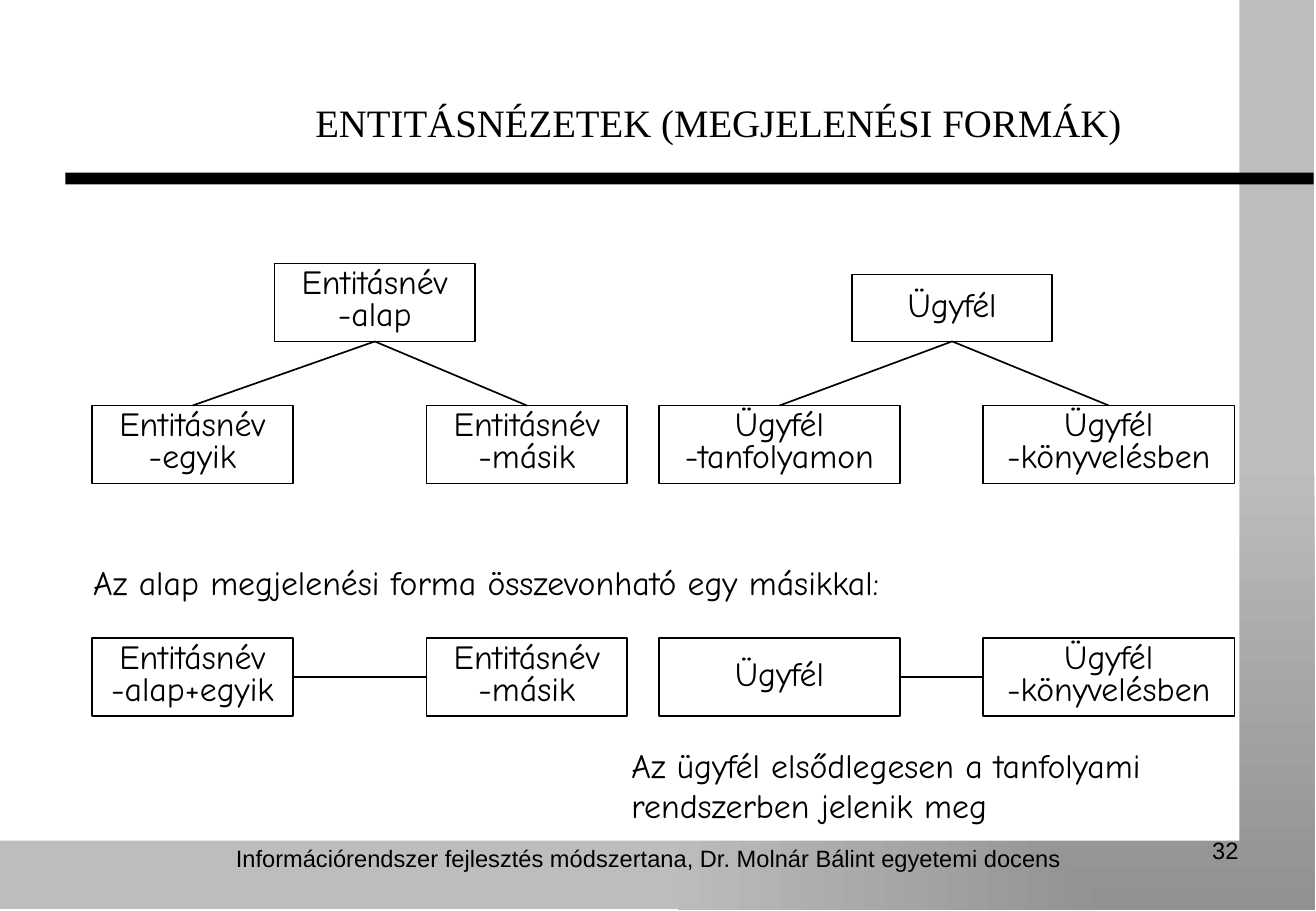
"""Build the slide on entity views and how they can be merged."""
from lxml.etree import SubElement
from pptx import Presentation
from pptx.dml.color import RGBColor
from pptx.enum.shapes import MSO_CONNECTOR, MSO_SHAPE
from pptx.enum.text import MSO_ANCHOR, PP_ALIGN
from pptx.oxml import parse_xml
from pptx.oxml.ns import nsdecls, qn
from pptx.util import Cm, Pt

COLORS = {"ink": "000000", "paper": "FFFFFF", "dark": "919191",
          "light": "BDBDBD", "shadow": "C0C0C0"}
INK = RGBColor.from_string(COLORS["ink"])

prs = Presentation()
prs.slide_width, prs.slide_height = Cm(27.51), Cm(19.05)
slide = prs.slides.add_slide(prs.slide_layouts[6])
shapes = slide.shapes


def add_rectangle(place, fill=None):
    rectangle = shapes.add_shape(MSO_SHAPE.RECTANGLE, *map(Cm, place))
    rectangle.shadow.inherit = False
    rectangle.line.fill.background()
    if fill:
        rectangle.fill.solid()
        rectangle.fill.fore_color.rgb = RGBColor.from_string(COLORS[fill])
    else:
        rectangle.fill.background()
    return rectangle


def write(holder, text, size, font, align, anchor=MSO_ANCHOR.TOP, spacing=None):
    frame = holder.text_frame
    frame.word_wrap = True
    frame.vertical_anchor = anchor
    frame.text = text
    for paragraph in frame.paragraphs:
        paragraph.alignment = align
        paragraph.line_spacing = spacing
        for run in paragraph.runs:
            run.font.size = Pt(size)
            run.font.name = font
            run.font.color.rgb = INK
    return frame


backdrop = add_rectangle((0, 0, 27.48, 19.02))
backdrop.fill._xPr.replace(backdrop.fill._xPr.find(qn("a:noFill")), parse_xml(
    f'<a:gradFill {nsdecls("a")} rotWithShape="1"><a:gsLst>'
    f'<a:gs pos="0"><a:srgbClr val="{COLORS["dark"]}"/></a:gs>'
    f'<a:gs pos="100000"><a:srgbClr val="{COLORS["light"]}"/></a:gs></a:gsLst>'
    '<a:path path="rect"><a:fillToRect l="100000" t="100000"/></a:path></a:gradFill>'))
add_rectangle((0, 0, 25.91, 17.58), "paper")
add_rectangle((1.37, 3.61, 26.09, 0.25), "ink")

captions = [
    ("Információrendszer fejlesztés módszertana, Dr. Molnár Bálint egyetemi docens",
     (3.96, 17.53, 19.2, 1.52), 14, "Arial", PP_ALIGN.CENTER),
    ("32", (19.71, 17.35, 6.43, 1.32), 14, "Arial", PP_ALIGN.RIGHT),
    ("Az alap megjelenési forma összevonható egy másikkal:",
     (1.7, 11.63, 24.13, 1.09), 20, "Comic Neue", PP_ALIGN.LEFT),
    ("Az ügyfél elsődlegesen a tanfolyami rendszerben jelenik meg",
     (12.95, 15.44, 12.85, 1.96), 20, "Comic Neue", PP_ALIGN.LEFT),
]
for text, place, size, font, align in captions:
    write(shapes.add_textbox(*map(Cm, place)), text, size, font, align)

title = shapes.add_textbox(Cm(4.24), Cm(0.97), Cm(21.59), Cm(3.18))
title_frame = write(title, "ENTITÁSNÉZETEK (MEGJELENÉSI FORMÁK)", 23,
                    "Times New Roman", PP_ALIGN.CENTER, MSO_ANCHOR.MIDDLE)
title_font = title_frame.paragraphs[0].runs[0].font
title_font._rPr.find(qn("a:solidFill")).addnext(parse_xml(
    f'<a:effectLst {nsdecls("a")}><a:outerShdw dist="17961" dir="2700000">'
    f'<a:srgbClr val="{COLORS["shadow"]}"/></a:outerShdw></a:effectLst>'))

BASE_TOP, VIEW_TOP, MERGED_TOP = 5.51, 8.48, 13.34
entities = {
    "base": ("Entitásnév\n-alap", 5.74, BASE_TOP, 4.19, 1.63),
    "one": ("Entitásnév\n-egyik", 1.93, VIEW_TOP, 4.19, 1.63),
    "other": ("Entitásnév\n-másik", 8.92, VIEW_TOP, 4.19, 1.63),
    "client": ("Ügyfél", 17.81, 5.74, 4.19, 1.4),
    "course": ("Ügyfél\n-tanfolyamon", 13.77, VIEW_TOP, 5.05, 1.63),
    "accounts": ("Ügyfél\n-könyvelésben", 20.55, VIEW_TOP, 5.26, 1.63),
    "merged one": ("Entitásnév\n-alap+egyik", 1.93, MERGED_TOP, 4.19, 1.63),
    "merged other": ("Entitásnév\n-másik", 8.92, MERGED_TOP, 4.19, 1.63),
    "merged client": ("Ügyfél", 13.77, MERGED_TOP, 5.05, 1.63),
    "merged accounts": ("Ügyfél\n-könyvelésben", 20.55, MERGED_TOP, 5.26, 1.63),
}
boxes = {}
for key, (text, *place) in entities.items():
    box = boxes[key] = add_rectangle(place)
    box.line.color.rgb = INK
    box.line.width = Pt(1)
    anchor = MSO_ANCHOR.TOP if "\n" in text else MSO_ANCHOR.MIDDLE
    write(box, text, 20, "Comic Neue", PP_ALIGN.CENTER, anchor, Pt(19))

BOTTOM_TO_TOP, RIGHT_TO_LEFT = (2, 0), (3, 1)
links = [
    ("base", "one", BOTTOM_TO_TOP),
    ("base", "other", BOTTOM_TO_TOP),
    ("client", "course", BOTTOM_TO_TOP),
    ("client", "accounts", BOTTOM_TO_TOP),
    ("merged one", "merged other", RIGHT_TO_LEFT),
    ("merged client", "merged accounts", RIGHT_TO_LEFT),
]
for source, target, (start, end) in links:
    link = shapes.add_connector(MSO_CONNECTOR.STRAIGHT, 0, 0, 0, 0)
    link.begin_connect(boxes[source], start)
    link.end_connect(boxes[target], end)
    link.line.color.rgb = INK
    link.line.width = Pt(1)
    SubElement(link._element.spPr, qn("a:effectLst"))

prs.save("out.pptx")
